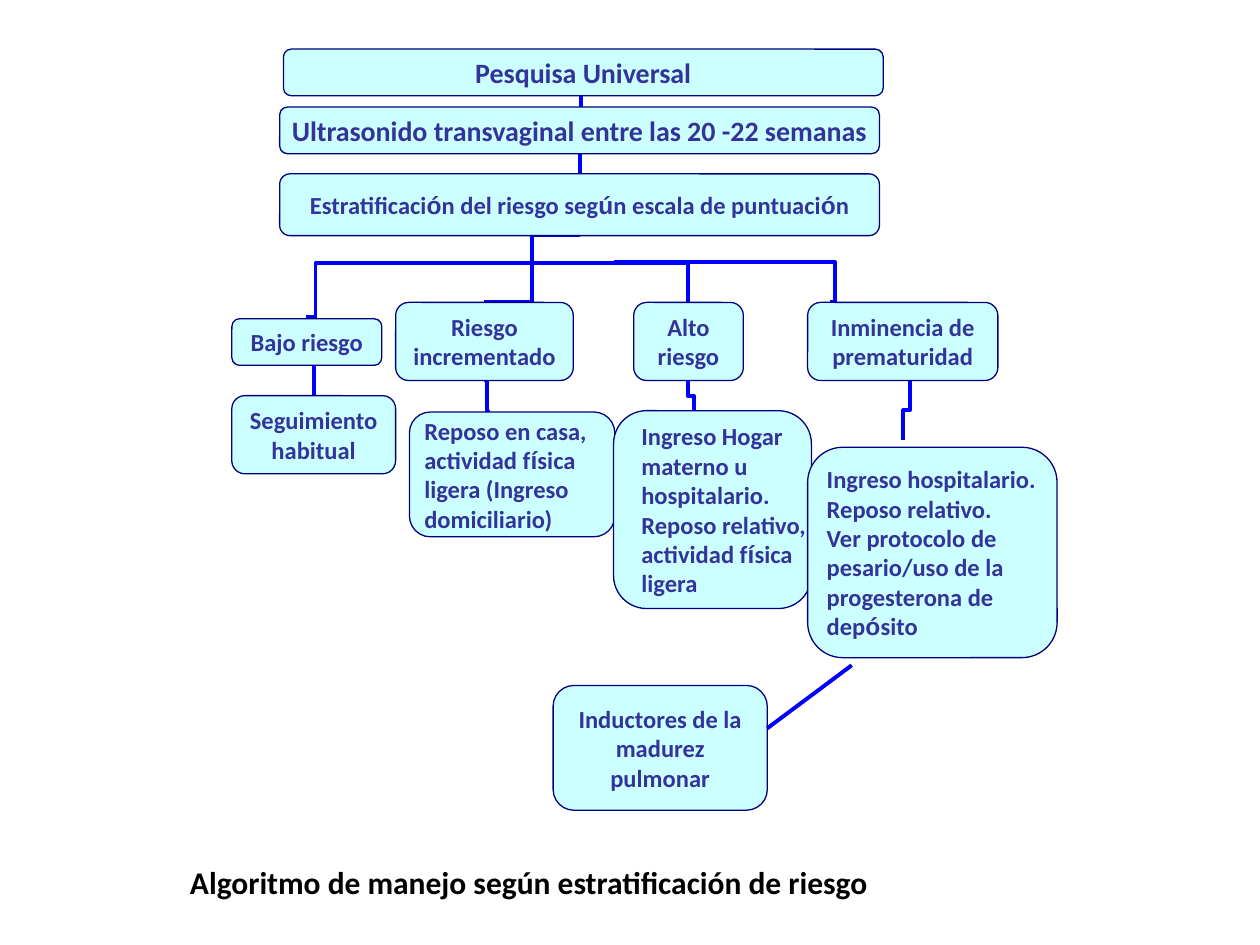
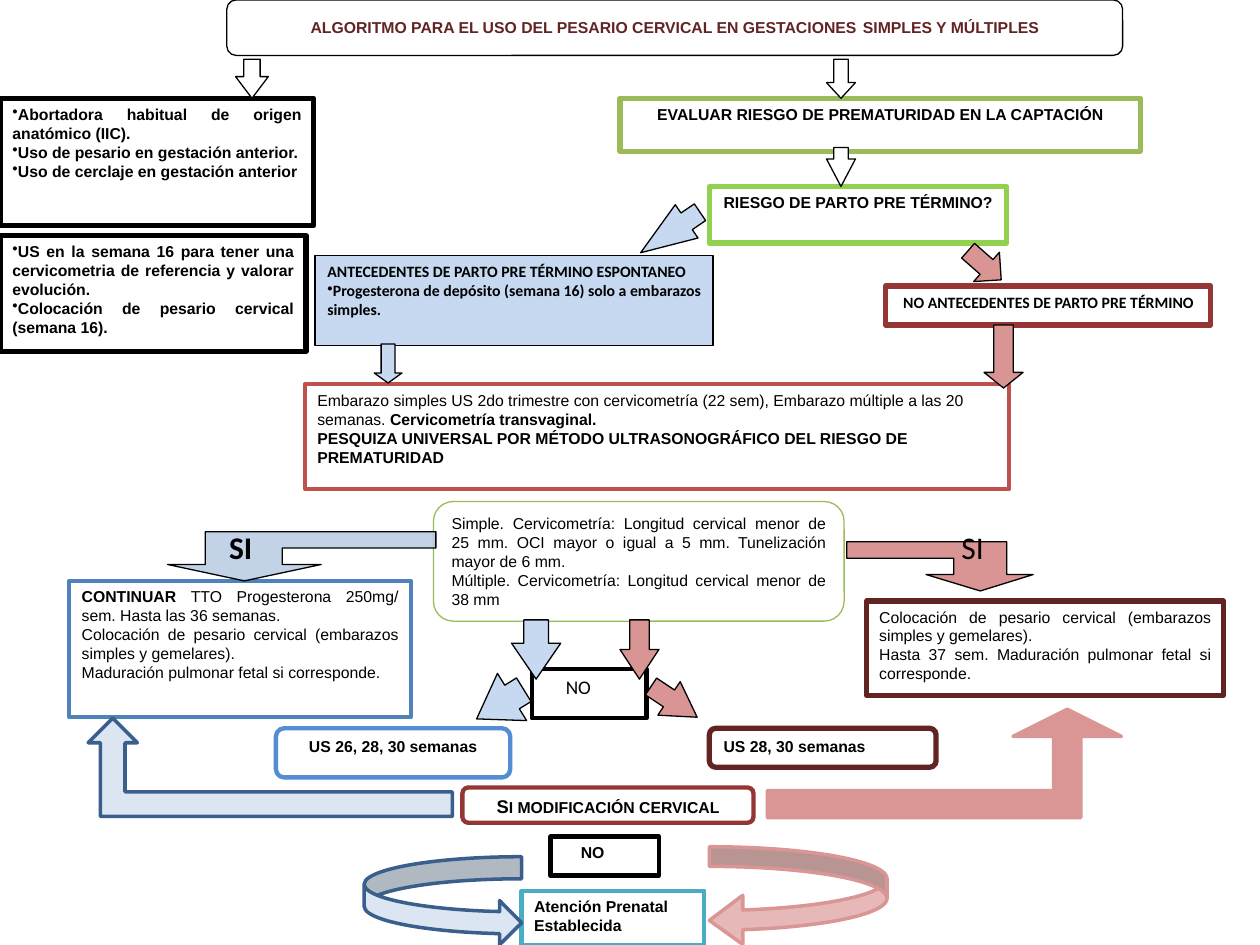
"""Build two slides with care paths for the risk of preterm birth."""
from dataclasses import dataclass
from itertools import groupby

from lxml import etree
from pptx import Presentation
from pptx import util as u
from pptx.dml.color import RGBColor
from pptx.enum import shapes, text
from pptx.oxml.ns import qn

PX = 9144
KIND = shapes.MSO_SHAPE
LEFT, MID, JUST = text.PP_ALIGN.LEFT, text.PP_ALIGN.CENTER, text.PP_ALIGN.JUSTIFY
TOP, MIDDLE = text.MSO_ANCHOR.TOP, text.MSO_ANCHOR.MIDDLE
BLACK, WHITE, NAVY, BLUE = "000000", "FFFFFF", "000080", "0000FF"
AQUA, INK, SKY, ROSE = "CCFFFF", "333399", "C6D9F1", "D99594"
MAROON, BRICK, STEEL, PALE = "622423", "943634", "3A5F8C", "DCE6F2"
CORAL, BLUSH = "D99694", "E6B9B8"

Area = tuple[int, int, int, int]
Point = tuple[int, int]


@dataclass(frozen=True)
class Run:
    text: str
    size: float = 0
    bold: bool | None = None
    font: str = ""


@dataclass(frozen=True)
class Para:
    runs: tuple[Run, ...]
    size: float = 9
    bold: bool = True
    align: int = LEFT
    font: str = "Arial"
    color: str = BLACK
    dot: bool = False


@dataclass(frozen=True)
class Node:
    area: Area
    lines: tuple[str, ...]
    size: int = 14
    align: int = MID
    label: Area | None = None


@dataclass(frozen=True)
class Link:
    start: Point
    end: Point
    bend: float | None = None
    turned: bool = False
    tail: str = ""
    head: str = ""


@dataclass(frozen=True)
class Block:
    area: Area
    line: str
    paras: tuple[Para, ...]
    weight: float = 3
    fill: str = WHITE
    kind: int = KIND.RECTANGLE
    inset: int = 10
    wrap: bool = True


@dataclass(frozen=True)
class Arrow:
    area: Area
    fill: str
    adj: tuple[float, ...] = ()
    turn: float = 0
    kind: int = KIND.DOWN_ARROW
    line: str = BLACK
    weight: float = 0.75
    flip: bool = False


def para(words: str, **style) -> Para:
    """Return a paragraph of one run."""
    return Para((Run(words),), **style)


def mixed(words: str, **style) -> Para:
    """Return a Calibri paragraph whose accented letters are Arial."""
    parts = groupby(words, lambda mark: mark in "óúí")
    runs = tuple(Run("".join(part), font="Arial" if accent else "") for accent, part in parts)
    return Para(runs, font="Calibri", color=INK, **style)


def hue(code: str) -> RGBColor:
    """Turn a hex string into a colour."""
    return RGBColor.from_string(code)


def scale(*sizes: float) -> list[int]:
    """Turn px into EMU."""
    return [round(size * PX) for size in sizes]


def paint(shape, fill: str, line: str, weight: float) -> None:
    """Give a shape its fill and outline."""
    shape.shadow.inherit = False
    shape.fill.solid()
    shape.fill.fore_color.rgb = hue(fill)
    shape.line.color.rgb = hue(line)
    shape.line.width = u.Pt(weight)


def write(shape, paras: tuple[Para, ...], anchor: int = TOP,
          inset: Area = (10, 5, 10, 5), wrap: bool = True) -> None:
    """Write paragraphs into a shape."""
    frame = shape.text_frame
    frame.word_wrap, frame.vertical_anchor = wrap, anchor
    (frame.margin_left, frame.margin_top,
     frame.margin_right, frame.margin_bottom) = scale(*inset)
    for place, item in enumerate(paras):
        line = frame.add_paragraph() if place else frame.paragraphs[0]
        line.alignment = item.align
        if item.dot:
            etree.SubElement(line._p.get_or_add_pPr(), qn("a:buChar"), char="•")
        line.font.name, line.font.size = item.font, u.Pt(item.size)
        line.font.bold, line.font.color.rgb = item.bold, hue(item.color)
        for part in item.runs:
            run = line.add_run()
            run.text = part.text
            if part.size:
                run.font.size = u.Pt(part.size)
            if part.bold is not None:
                run.font.bold = part.bold
            if part.font:
                run.font.name = part.font


def draw_node(slide, node: Node):
    """Draw a rounded step of the risk chart."""
    shape = slide.shapes.add_shape(KIND.ROUNDED_RECTANGLE, *scale(*node.area))
    paint(shape, AQUA, NAVY, 0.75)
    target = slide.shapes.add_textbox(*scale(*node.label)) if node.label else shape
    paras = tuple(mixed(line, size=node.size, align=node.align) for line in node.lines)
    write(target, paras, MIDDLE, (7, 4, 7, 4))
    return shape


def draw_link(slide, link: Link):
    """Draw a straight or bent connector."""
    (x, y), (right, low) = link.start, link.end
    if link.turned:
        mid_x, mid_y = (x + right) / 2, (y + low) / 2
        half_x, half_y = (y - low) / 2, (right - x) / 2
        x, y, right, low = mid_x - half_x, mid_y - half_y, mid_x + half_x, mid_y + half_y
    kind = shapes.MSO_CONNECTOR.STRAIGHT if link.bend is None else shapes.MSO_CONNECTOR.ELBOW
    line = slide.shapes.add_connector(kind, *scale(x, y, right, low))
    line.line.color.rgb, line.line.width = hue(BLUE), u.Pt(2.25)
    props = line._element.spPr
    etree.SubElement(props, qn("a:effectLst"))
    if link.turned:
        props.find(qn("a:xfrm")).set("rot", str(270 * 60000))
    if link.bend is not None:
        guides = props.find(qn("a:prstGeom")).get_or_add_avLst()
        etree.SubElement(guides, qn("a:gd"), name="adj1", fmla=f"val {round(link.bend * 100000)}")
    return line


def draw_block(slide, block: Block) -> None:
    """Draw a framed text block."""
    shape = slide.shapes.add_shape(block.kind, *scale(*block.area))
    paint(shape, block.fill, block.line, block.weight)
    write(shape, block.paras, inset=(block.inset, 5, 10, 5), wrap=block.wrap)


def draw_arrow(slide, arrow: Arrow) -> None:
    """Draw a block arrow."""
    shape = slide.shapes.add_shape(arrow.kind, *scale(*arrow.area))
    paint(shape, arrow.fill, arrow.line, arrow.weight)
    shape.rotation = arrow.turn
    for place, value in enumerate(arrow.adj):
        shape.adjustments[place] = value
    if arrow.flip:
        shape._element.spPr.find(qn("a:xfrm")).set("flipH", "1")


def draw_bend(slide, points: tuple[Point, ...], fill: str, alpha: int) -> None:
    """Draw a bent arrow outline."""
    pen = slide.shapes.build_freeform(*points[0], scale=PX)
    pen.add_line_segments(points[1:], close=True)
    shape = pen.convert_to_shape()
    paint(shape, fill, BLACK, 0.75)
    if alpha < 100:
        tone = shape._element.spPr.find(qn("a:solidFill"))[0]
        etree.SubElement(tone, qn("a:alpha"), val=str(alpha * 1000))


def draw_label(slide, area: Area, item: Para, inset: int = 10) -> None:
    """Draw plain text."""
    write(slide.shapes.add_textbox(*scale(*area)), (item,), inset=(inset, 5, 10, 5))


NODES = {
    "survey": Node((225, 39, 476, 37), ("Pesquisa Universal",), 16),
    "scan": Node((222, 85, 476, 37), ("Ultrasonido transvaginal entre las 20 -22 semanas",), 16),
    "strata": Node((222, 138, 476, 49),
                   ("Estratificación del riesgo según escala de puntuación",)),
    "low": Node((184, 253, 119, 37), ("Bajo riesgo",)),
    "raised": Node((314, 240, 141, 62), ("Riesgo incrementado",)),
    "high": Node((503, 240, 87, 62), ("Alto riesgo",)),
    "near": Node((641, 240, 151, 62), ("Inminencia de prematuridad",)),
    "follow": Node((184, 314, 130, 62), ("Seguimiento habitual",)),
    "rest": Node((325, 327, 163, 99),
                 ("Reposo en casa, actividad física ligera (Ingreso domiciliario)",), align=LEFT),
    "home": Node((487, 326, 157, 157),
                 ("Ingreso Hogar materno u hospitalario. Reposo relativo, actividad física ligera",),
                 align=LEFT, label=(502, 326, 149, 157)),
    "ward": Node((641, 355, 198, 167),
                 ("Ingreso hospitalario. Reposo relativo.",
                  "Ver protocolo de pesario/uso de la progesterona de depósito"), align=LEFT),
    "lungs": Node((439, 544, 170, 99), ("Inductores de la madurez pulmonar",)),
}
LINKS = (
    Link((717, 349), (722, 302), 0.5, True),
    Link((551, 327), (546, 302), 0.5, True),
    Link((389, 327), (384, 302), 0.5),
    Link((249, 314), (249, 290), tail="follow"),
    Link((659, 240), (487, 208), -0.02),
    Link((546, 240), (429, 209), 0),
    Link((384, 240), (460, 187), 0.5),
    Link((243, 252), (430, 209), 0.04),
    Link((460, 138), (460, 122), tail="strata", head="scan"),
    Link((460, 85), (463, 76), 0.5),
)
ROUND = KIND.ROUNDED_RECTANGLE
BLOCKS = (
    Block((180, 0, 711, 44), BLACK, (Para((
        Run("ALGORITMO PARA EL USO DEL PESARIO CERVICAL EN GESTACIONES"), Run(" ", 14),
        Run("SIMPLES Y MÚLTIPLES")), align=MID, color=MAROON),), 0.75, kind=ROUND),
    Block((0, 78, 249, 101), BLACK, tuple(para(line, align=JUST, dot=True) for line in (
        "Abortadora habitual de origen anatómico (IIC).", "Uso de pesario en gestación anterior.",
        "Uso de cerclaje en gestación anterior"))),
    Block((0, 187, 243, 92), BLACK, tuple(para(line, align=JUST, dot=True) for line in (
        "US en la semana 16 para tener una cervicometria de referencia y valorar evolución.",
        "Colocación de pesario cervical (semana 16)."))),
    Block((250, 203, 316, 71), BLACK, (
        para("ANTECEDENTES DE PARTO PRE TÉRMINO ESPONTANEO", font="Calibri"),
        para("Progesterona de depósito (semana 16) solo a embarazos simples.",
             font="Calibri", align=JUST, dot=True)), 0.75, SKY),
    Block((492, 78, 413, 42), "9BBB59",
          (para("EVALUAR RIESGO DE PREMATURIDAD EN LA CAPTACIÓN", align=MID),)),
    Block((563, 148, 236, 45), "92D050",
          (para("RIESGO DE PARTO PRE TÉRMINO?", align=MID),), wrap=False),
    Block((703, 227, 258, 31), BRICK,
          (para("NO ANTECEDENTES DE PARTO PRE TÉRMINO", font="Calibri", align=MID),)),
    Block((242, 305, 559, 83), "C0504D", (
        Para((Run("Embarazo simples US 2do trimestre con cervicometría (22 sem), "
                  "Embarazo múltiple a las 20 semanas. "),
              Run("Cervicometría transvaginal.", bold=True)), bold=False),
        para("PESQUIZA UNIVERSAL POR MÉTODO ULTRASONOGRÁFICO DEL RIESGO DE PREMATURIDAD")), 2.5),
    Block((344, 398, 326, 95), "9BBB59", tuple(para(line, bold=False, align=JUST) for line in (
        "Simple. Cervicometría: Longitud cervical menor de 25 mm. OCI mayor o igual a 5 mm. "
        "Tunelización mayor de 6 mm.",
        "Múltiple. Cervicometría: Longitud cervical menor de 38 mm")), 0.75, kind=ROUND),
    Block((55, 461, 271, 108), "4F81BD", (
        Para((Run("CONTINUAR ", bold=True),
              Run("TTO Progesterona 250mg/ sem. Hasta las 36 semanas.")), bold=False, align=JUST),
        para("Colocación de pesario cervical (embarazos simples y gemelares).",
             bold=False, align=JUST),
        para("Maduración pulmonar fetal si corresponde.", bold=False, align=JUST)), 2.5),
    Block((688, 477, 283, 75), MAROON, tuple(para(line, bold=False, align=JUST) for line in (
        "Colocación de pesario cervical (embarazos simples y gemelares).",
        "Hasta 37 sem. Maduración pulmonar fetal si corresponde."))),
    Block((219, 578, 186, 39), "548DD4", (para("US 26, 28, 30 semanas", align=MID),),
          2.5, kind=ROUND),
    Block((563, 578, 180, 31), MAROON, (para("US 28, 30 semanas"),), kind=ROUND),
    Block((367, 625, 231, 28), BRICK,
          (Para((Run("S", 10.5), Run("I MODIFICACIÓN CERVICAL")), align=MID),), 2.5, kind=ROUND),
    Block((437, 664, 86, 31), BLACK, (para("NO"),), 2.5, inset=24),
    Block((414, 707, 145, 43), "4BACC6", (para("Atención Prenatal Establecida"),), 2.5),
    Block((422, 531, 91, 39), BLACK, (para("NO", size=11, bold=False, font="Calibri"),),
          2.5, inset=27),
)
BENDS = (
    (((194, 461), (255, 448), (224, 448), (224, 435), (346, 435), (346, 422),
      (163, 422), (163, 448), (133, 448)), "B8CCE4", 86),
    (((778, 469), (735, 456), (757, 456), (757, 443), (672, 443), (672, 430),
      (799, 430), (799, 456), (820, 456)), ROSE, 100),
)
ARROWS = (
    Arrow((516, 156, 32, 57), SKY, (0.5, 1.38), 55.7),
    Arrow((766, 193, 31, 35), ROSE, (0.5, 0.5), 311.3),
    Arrow((656, 47, 23, 31), WHITE, (0.5, 0.54)),
    Arrow((656, 117, 23, 31), WHITE, (0.5, 0.95)),
    Arrow((187, 47, 26, 31), WHITE, (0.5, 0.66)),
    Arrow((297, 273, 22, 31), SKY, (0.5, 0.36)),
    Arrow((781, 258, 31, 50), ROSE, (0.5, 0.4)),
    Arrow((519, 535, 32, 44), ROSE, (0.5, 0.84), 303.7),
    Arrow((406, 492, 39, 47), SKY, (0.5, 0.73)),
    Arrow((492, 492, 31, 47), ROSE, (0.5, 0.76)),
    Arrow((375, 537, 44, 44), SKY, (0.5, 0.75), 58.3),
    Arrow((70, 570, 289, 78), PALE, kind=KIND.BENT_UP_ARROW, line=STEEL, weight=2, flip=True),
    Arrow((609, 563, 281, 86), CORAL, (0.25, 0.5, 0.25), kind=KIND.BENT_UP_ARROW,
          line=CORAL, weight=2),
    Arrow((289, 680, 125, 70), PALE, kind=KIND.CURVED_RIGHT_ARROW, line=STEEL, weight=2),
    Arrow((563, 672, 141, 78), BLUSH, (0.2, 0.5, 0.34), kind=KIND.CURVED_LEFT_ARROW,
          line=CORAL, weight=2),
)


def risk_slide(slide) -> None:
    """Draw care by level of risk."""
    lines = [draw_link(slide, link) for link in LINKS]
    steps = {name: draw_node(slide, node) for name, node in NODES.items()}
    for link, line in zip(LINKS, lines):
        if link.tail:
            line.begin_connect(steps[link.tail], 0)
        if link.head:
            line.end_connect(steps[link.head], 2)
    draw_link(slide, Link((676, 528), (609, 578)))
    draw_label(slide, (141, 680, 750, 40), para(
        "Algoritmo de manejo según estratificación de riesgo", size=18, font="Calibri"))


def ring_slide(slide) -> None:
    """Draw the use of the pessary."""
    for block in BLOCKS:
        draw_block(slide, block)
    for bend in BENDS:
        draw_bend(slide, *bend)
    for arrow in ARROWS:
        draw_arrow(slide, arrow)
    draw_label(slide, (172, 414, 55, 40), para("SI", size=18, font="Calibri"))
    draw_label(slide, (742, 414, 75, 40), para("SI", size=18, font="Calibri", bold=False), 21)


def main() -> None:
    """Build and save the deck."""
    deck = Presentation()
    deck.slide_width, deck.slide_height = scale(1000, 750)
    for fill in (risk_slide, ring_slide):
        fill(deck.slides.add_slide(deck.slide_layouts[6]))
    deck.save("out.pptx")


if __name__ == "__main__":
    main()
